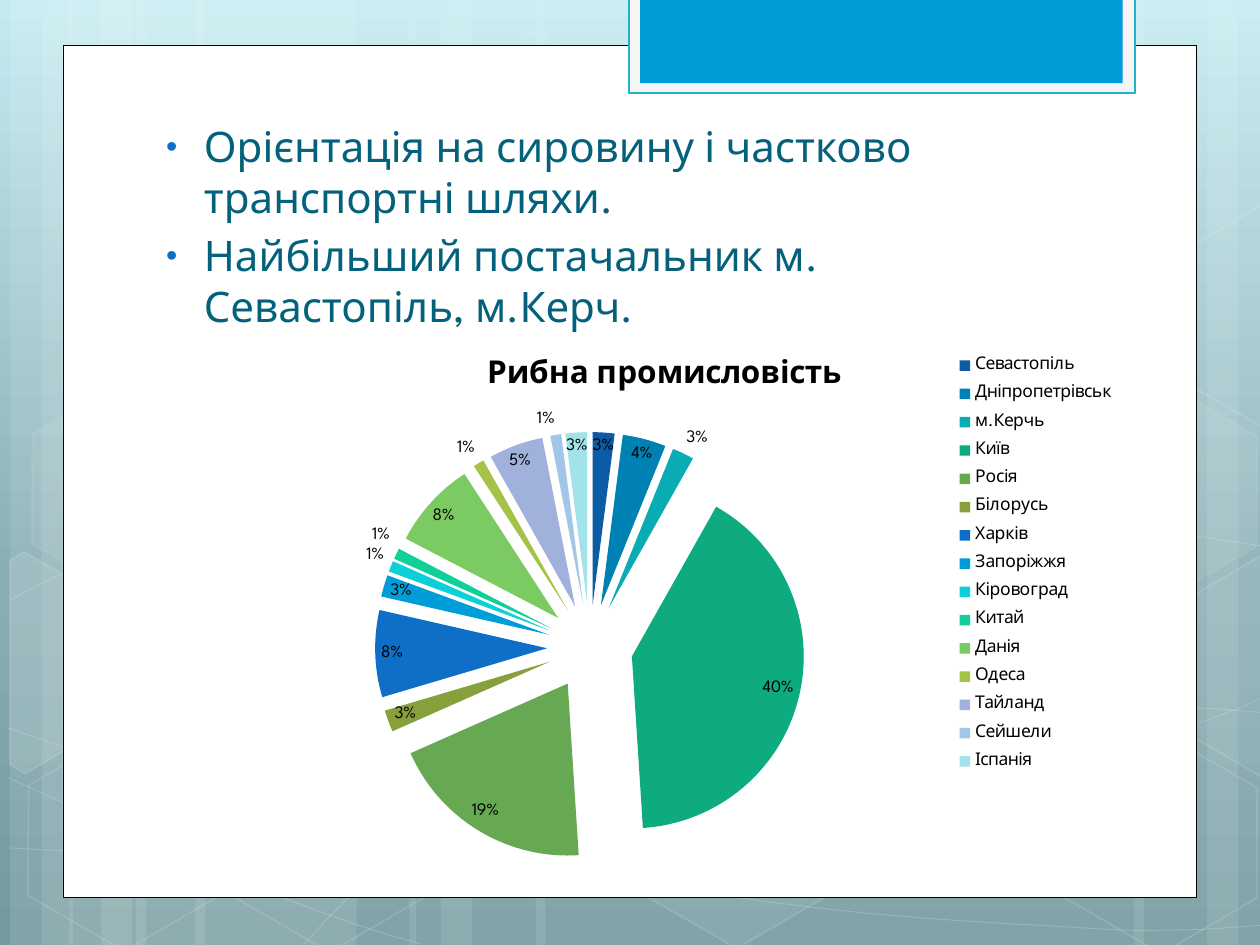
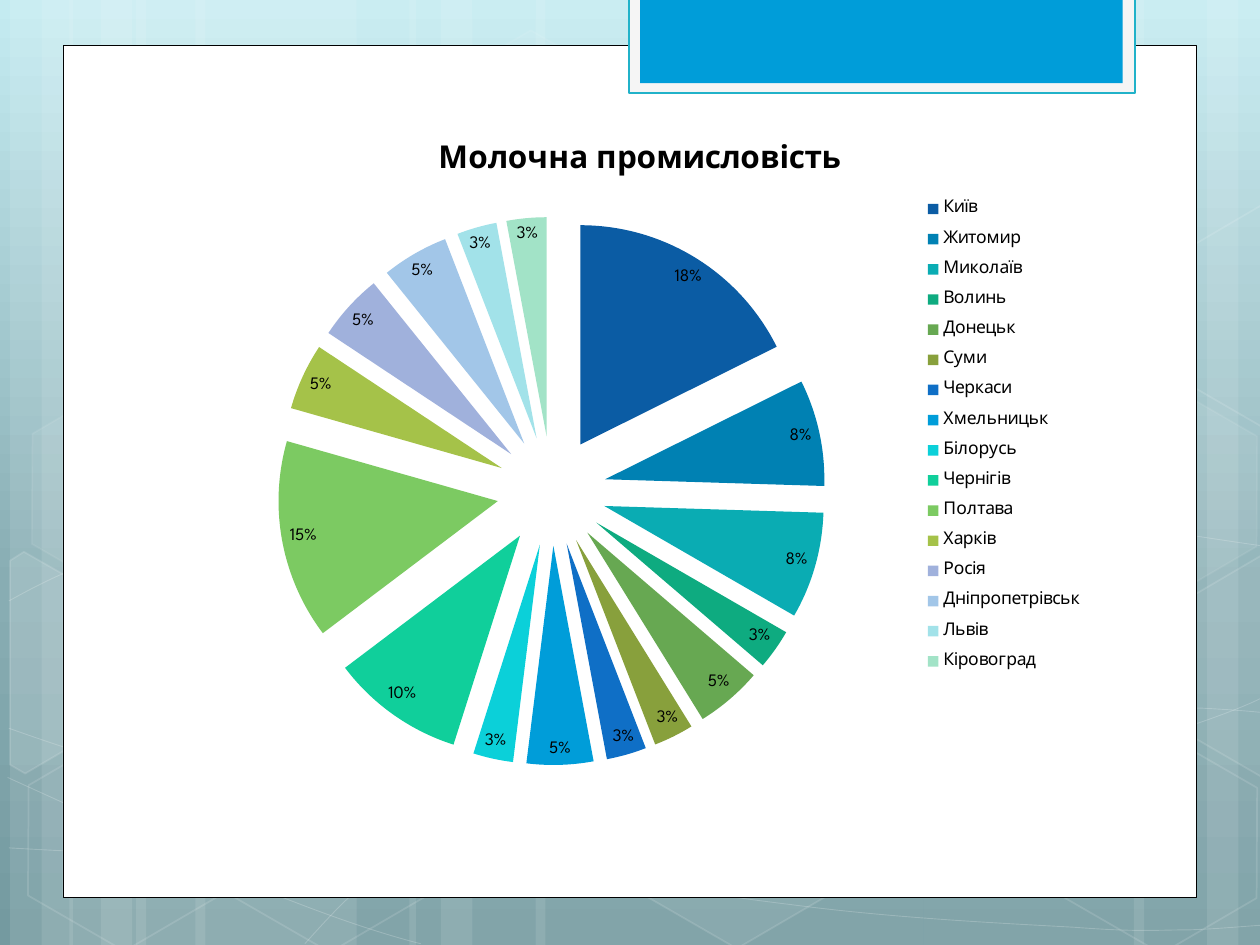
from copy import deepcopy

from lxml.etree import SubElement
from pptx import Presentation
from pptx.chart.data import CategoryChartData
from pptx.dml.color import RGBColor
from pptx.enum.chart import XL_CHART_TYPE, XL_LABEL_POSITION, XL_LEGEND_POSITION
from pptx.enum.shapes import MSO_SHAPE
from pptx.oxml import parse_xml
from pptx.oxml.ns import nsdecls, qn
from pptx.util import Pt

PX = 9144  # 100 px to the inch
FONT = "League Spartan"
WHITE = RGBColor(0xFF, 0xFF, 0xFF)
BLACK = RGBColor(0x00, 0x00, 0x00)
OFF_WHITE = RGBColor(0xF5, 0xF5, 0xF5)
TEAL = RGBColor(0x21, 0xB2, 0xC9)
SKY = RGBColor(0x00, 0x9D, 0xD9)
DEEP_TEAL = RGBColor(0x04, 0x61, 0x7B)
BACKDROP = [(0, RGBColor(0xC4, 0xEB, 0xF1)), (0.62, RGBColor(0x88, 0xAD, 0xB3)),
            (1, RGBColor(0x74, 0x9A, 0xA0))]
SLICE_COLORS = [RGBColor.from_string(code) for code in (
    "0B5CA4", "0081B3", "0AACB3", "0EAB80", "67A852", "88A03C",
    "0F6FC6", "009DD9", "0BD0D9", "10CF9B", "7CCA62", "A5C249",
    "A0B1DC", "A2C6E8", "A2E2E9", "A2E3C7")]

# Backdrop: left and width of the full-height stripes
STRIPES = [(108, 175), (8, 50), (33, 83), (155, 175), (55, 50), (80, 83), (733, 175),
           (958, 50), (900, 83), (425, 308), (325, 50), (350, 83)]
# Each wave is a start point followed by groups of three Bezier points
WAVES = [
    [(7, 673), (61, 676), (115, 679), (190, 678), (265, 677), (358, 675), (458, 665),
     (558, 655), (700, 636), (792, 617), (883, 598), (977, 568), (1007, 551)],
    [(7, 477), (36, 461), (65, 446), (121, 431), (178, 416), (259, 394), (347, 387),
     (436, 380), (544, 379), (654, 387), (764, 395), (947, 426), (1007, 434)],
    [(6, 617), (127, 672), (247, 727), (334, 749)],
    [(7, 578), (38, 589), (70, 600), (128, 616), (186, 631), (273, 656), (357, 673),
     (440, 690), (545, 708), (628, 718), (711, 729), (800, 733), (853, 736),
     (905, 740), (919, 738), (945, 738), (971, 737), (989, 735), (1007, 734)],
    [(242, 749), (260, 729), (278, 709), (302, 691), (326, 673), (360, 653), (388, 639),
     (416, 625), (433, 619), (470, 609), (506, 599), (573, 585), (608, 578),
     (644, 571), (649, 571), (680, 569), (711, 566), (760, 563), (794, 562),
     (829, 561), (886, 562), (886, 562), (908, 562), (930, 562), (953, 562),
     (971, 563), (988, 564), (1006, 566)],
]
# Left, top, fill opacity and line opacity in percent
HEXAGONS = [(334, 36, 4, 8), (497, 589, 6, 12), (11, 591, 0, 12), (14, 312, 7, 8),
            (174, 592, 0, 12), (753, 453, 10, 12), (834, 593, 0, 12), (834, 314, 7, 8)]
CUT_HEXAGONS = [
    ([(8, 445), (19, 438), (96, 482), (95, 570), (20, 614), (8, 607)], 10),
    ([(926, 485), (1001, 441), (1009, 446), (1009, 613), (1002, 617), (926, 573)], 4),
    ([(926, 207), (1001, 163), (1010, 168), (1009, 335), (1002, 339), (926, 295)], 0),
]

BULLETS = ["Орієнтація на сировину і частково транспортні шляхи.",
           "Найбільший постачальник м. Севастопіль, м.Керч."]
PAGES = [
    {"title": "Рибна промисловість", "bullets": BULLETS,
     "chart": (130, 265, 795, 433), "plot": (298, 343, 341, 341),
     "legend": (760, 274, 125, 347), "label_format": '[=2]"3%";0"%"',
     "shares": {"Севастопіль": 2, "Дніпропетрівськ": 4, "м.Керчь": 2, "Київ": 40,
                "Росія": 19, "Білорусь": 2, "Харків": 8, "Запоріжжя": 2,
                "Кіровоград": 1, "Китай": 1, "Данія": 8, "Одеса": 1, "Тайланд": 5,
                "Сейшели": 1, "Іспанія": 2}},
    {"title": "Молочна промисловість", "bullets": [],
     "chart": (114, 92, 788, 546), "plot": (220, 172, 435, 435),
     "legend": (734, 148, 125, 395), "label_format": '0"%"',
     "shares": {"Київ": 18, "Житомир": 8, "Миколаїв": 8, "Волинь": 3, "Донецьк": 5,
                "Суми": 3, "Черкаси": 3, "Хмельницьк": 5, "Білорусь": 3,
                "Чернігів": 10, "Полтава": 15, "Харків": 5, "Росія": 5,
                "Дніпропетрівськ": 5, "Львів": 3, "Кіровоград": 3}},
]


def paint(shape, fill=None, opacity=100, line=None, width=1, line_opacity=100):
    """Set fill and line; no colour, or an opacity of 0, leaves that part out."""
    shape.shadow.inherit = False
    shape.line.width = Pt(width)
    for part, color, percent in ((shape.fill, fill, opacity),
                                 (shape.line.fill, line, line_opacity)):
        if color is None or percent == 0:
            part.background()
            continue
        part.solid()
        part.fore_color.rgb = color
    for holder, percent in ((shape.element.spPr, opacity),
                            (shape.element.spPr.find(qn("a:ln")), line_opacity)):
        color_node = holder.find(qn("a:solidFill") + "/" + qn("a:srgbClr"))
        if color_node is not None and percent < 100:
            SubElement(color_node, qn("a:alpha"), val=str(percent * 1000))


def make_layout(frame, area, inner):
    """Return a manual chart layout that puts area (px on the slide) inside frame."""
    left, top, width, height = frame
    fractions = {"x": (area[0] - left) / width, "y": (area[1] - top) / height,
                 "w": area[2] / width, "h": area[3] / height}
    target = '<c:layoutTarget val="inner"/>' if inner else ""
    modes = '<c:xMode val="edge"/><c:yMode val="edge"/>'
    sizes = "".join(f'<c:{key} val="{value:.3f}"/>' for key, value in fractions.items())
    return parse_xml(f'<c:layout {nsdecls("c")}><c:manualLayout>{target}{modes}{sizes}'
                     '</c:manualLayout></c:layout>')


deck = Presentation()
deck.slide_width, deck.slide_height = 1000 * PX, 750 * PX
pages = [deck.slides.add_slide(deck.slide_layouts[6]) for content in PAGES]

# Shared look: gradient backdrop on the master
master = deck.slide_master
backdrop = master.background.fill
backdrop.gradient()
backdrop.gradient_angle = 270
stop_list = master.element.find(".//" + qn("p:bg") + "//" + qn("a:gsLst"))
stop_list.append(deepcopy(stop_list[-1]))
for stop, (position, color) in zip(backdrop.gradient_stops, BACKDROP):
    stop.position = position
    stop.color.rgb = color

# Shared shapes are drawn on the first page, then handed to the master
shapes = pages[0].shapes
for left, width in STRIPES:
    stripe = shapes.add_shape(MSO_SHAPE.RECTANGLE, left * PX, 0, width * PX, 750 * PX)
    paint(stripe, WHITE, 10)

for points in WAVES:
    builder = shapes.build_freeform(*points[0], scale=PX)
    builder.add_line_segments(points[3::3], close=False)
    wave = builder.convert_to_shape()
    left, top = round(wave.left / PX), round(wave.top / PX)
    for index, segment in enumerate(wave.element.findall(".//" + qn("a:lnTo"))):
        curve = parse_xml(f'<a:cubicBezTo {nsdecls("a")}/>')
        for x, y in points[3 * index + 1:3 * index + 4]:
            SubElement(curve, qn("a:pt"), x=str(x - left), y=str(y - top))
        segment.getparent().replace(segment, curve)
    paint(wave, line=WHITE, width=0.5, line_opacity=20)

for left, top, opacity, line_opacity in HEXAGONS:
    hexagon = shapes.add_shape(MSO_SHAPE.HEXAGON, left * PX, top * PX, 175 * PX, 152 * PX)
    hexagon.adjustments[0] = 0.285
    hexagon.rotation = 30
    paint(hexagon, WHITE, opacity, WHITE, 1, line_opacity)

for points, opacity in CUT_HEXAGONS:
    builder = shapes.build_freeform(*points[0], scale=PX)
    builder.add_line_segments(points[1:])
    paint(builder.convert_to_shape(), WHITE, opacity, WHITE, 1, 12)

# White panel and the tab at its top
for area, fill, line, width in (((50, 36, 900, 676), WHITE, BLACK, 0.5),
                                ((499, -2, 402, 76), OFF_WHITE, TEAL, 1.25),
                                ((508, -2, 383, 68), SKY, None, 1)):
    panel = shapes.add_shape(MSO_SHAPE.RECTANGLE, *(side * PX for side in area))
    paint(panel, fill, line=line, width=width)

for placeholder in list(master.placeholders):
    placeholder.element.getparent().remove(placeholder.element)
for number, shape in enumerate(list(shapes), start=2):
    shape.element.nvSpPr.cNvPr.set("id", str(number))
    master.shapes._spTree.append(shape.element)

for page, content in zip(pages, PAGES):
    if content["bullets"]:
        box = page.shapes.add_textbox(114 * PX, 91 * PX, 741 * PX, 384 * PX)
        frame = box.text_frame
        frame.word_wrap = True
        frame.text = "\n".join(content["bullets"])
        for para in frame.paragraphs:
            props = para._p.get_or_add_pPr()
            props.set("marL", str(38 * PX))
            props.set("indent", str(-30 * PX))
            for tag in (
                    '<a:spcBef {}><a:spcPct val="20000"/></a:spcBef>',
                    '<a:buClr {}><a:srgbClr val="0F6FC6"/></a:buClr>',
                    '<a:buSzPct {} val="76000"/>',
                    '<a:buFont {} typeface="Arial"/>',
                    '<a:buChar {} char="•"/>'):
                props.append(parse_xml(tag.format(nsdecls("a"))))
            for span in para.runs:
                span.font.name = FONT
                span.font.size = Pt(24)
                span.font.color.rgb = DEEP_TEAL

    # Exploded pie
    data = CategoryChartData()
    data.categories = list(content["shares"])
    data.add_series(content["title"], list(content["shares"].values()))
    chart = page.shapes.add_chart(XL_CHART_TYPE.PIE,
                                  *(side * PX for side in content["chart"]), data).chart
    chart.font.name = FONT
    chart.font.size = Pt(10)
    chart.font.color.rgb = BLACK

    chart.has_title = True
    chart.chart_title.include_in_layout = False
    chart.chart_title.text_frame.text = content["title"]
    title_font = chart.chart_title.text_frame.paragraphs[0].runs[0].font
    title_font.name = FONT
    title_font.size = Pt(18)
    title_font.bold = True
    title_font.color.rgb = BLACK

    chart.has_legend = True
    legend = chart.legend
    legend.position = XL_LEGEND_POSITION.RIGHT
    legend.include_in_layout = False
    legend_node = legend._element
    for old in legend_node.findall(qn("c:layout")):
        legend_node.remove(old)
    legend_node.find(qn("c:legendPos")).addnext(
        make_layout(content["chart"], content["legend"], inner=False))

    plot = chart.plots[0]
    plot.vary_by_categories = True
    plot_area = plot._element.getparent()
    for old in plot_area.findall(qn("c:layout")):
        plot_area.remove(old)
    plot_area.insert(0, make_layout(content["chart"], content["plot"], inner=True))

    series = plot.series[0]
    for index in range(len(content["shares"])):
        slice_fill = series.points[index].format.fill
        slice_fill.solid()
        slice_fill.fore_color.rgb = SLICE_COLORS[index]
    series._element.find(qn("c:dPt")).addprevious(
        parse_xml(f'<c:explosion {nsdecls("c")} val="25"/>'))

    plot.has_data_labels = True
    labels = plot.data_labels
    labels.show_value = True
    labels.number_format = content["label_format"]
    labels.number_format_is_linked = False
    labels.position = XL_LABEL_POSITION.BEST_FIT
    labels.font.name = FONT
    labels.font.size = Pt(10)
    labels.font.color.rgb = BLACK
    for leader in labels._element.findall(qn("c:showLeaderLines")):
        leader.set("val", "0")

deck.save("out.pptx")
